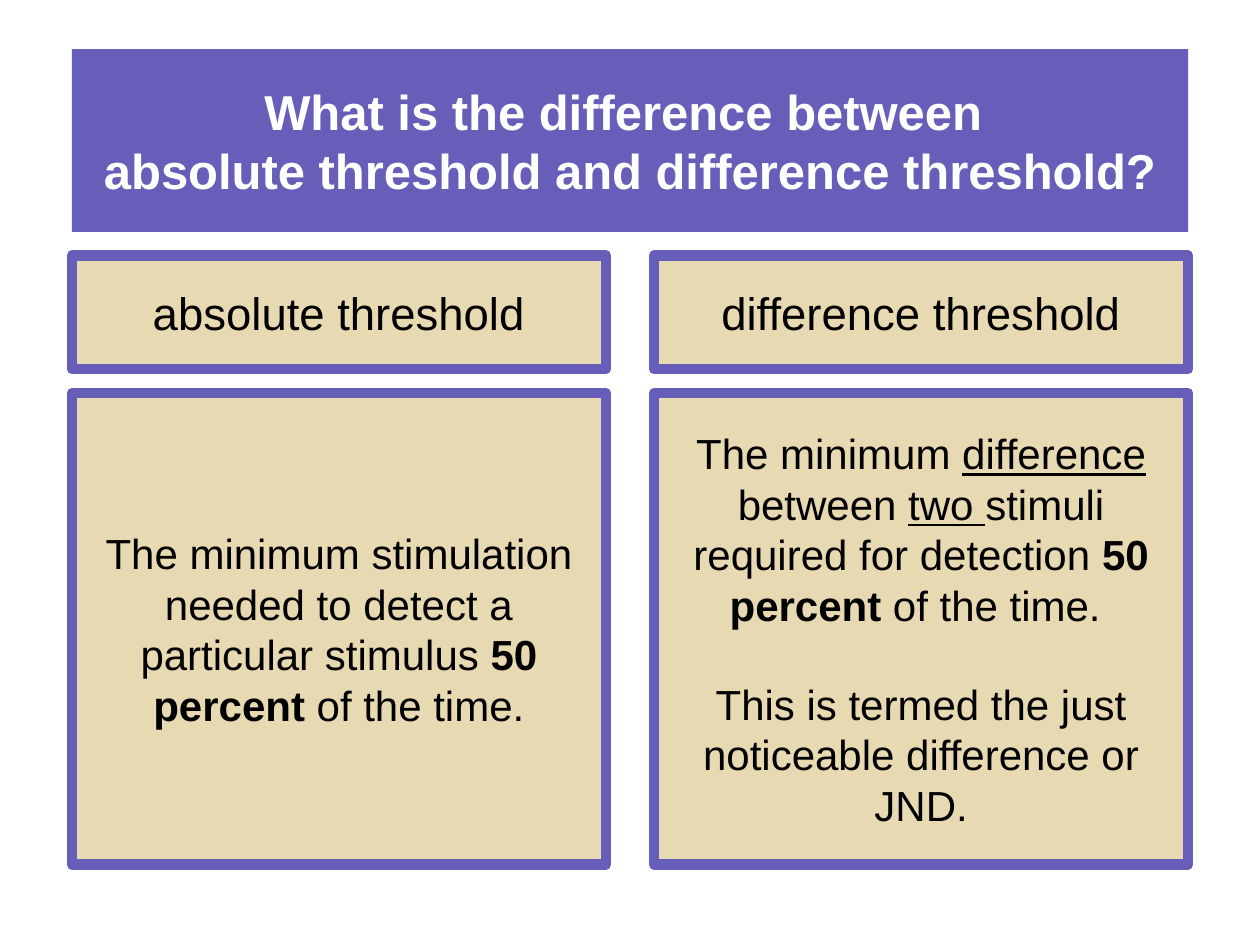
from collections import namedtuple
from dataclasses import dataclass

import pptx
import pptx.dml.color
import pptx.enum.shapes
import pptx.enum.text
import pptx.util

Box = namedtuple("Box", "left top width height")
Run = namedtuple("Run", "text bold underline", defaults=(False, False))


@dataclass(frozen=True)
class Theme:
    font: str = "Arial"
    purple: str = "665EB8"
    sand: str = "E7D9B1"
    white: str = "FFFFFF"
    black: str = "000000"
    title_size: int = 28
    heading_size: int = 26
    body_size: int = 24
    border: int = 6
    paragraph_gap: int = 28


THEME = Theme()
SLIDE_WIDTH, SLIDE_HEIGHT = 10, 7.5
MARGIN = 0.57
COLUMN_GAP = 0.38
CONTENT_WIDTH = SLIDE_WIDTH - 2 * MARGIN
TITLE_TOP, TITLE_HEIGHT = 0.39, 1.45
COLUMNS_TOP, COLUMNS_HEIGHT = 2.03, 4.83
HEADING_HEIGHT, ROW_GAP = 0.9, 0.19

TITLE = "What is the difference between \vabsolute threshold and difference threshold?"

# Each column: heading, paragraphs of runs, space between the paragraphs
COLUMNS = [
    (
        "absolute threshold",
        [
            [Run("The minimum stimulation")],
            [
                Run("needed to detect a particular stimulus "),
                Run("50 percent", bold=True),
                Run(" of the time."),
            ],
        ],
        0,
    ),
    (
        "difference threshold",
        [
            [
                Run("The minimum "),
                Run("difference", underline=True),
                Run(" between "),
                Run("two ", underline=True),
                Run("stimuli required for detection "),
                Run("50 percent", bold=True),
                Run(" of the time. "),
            ],
            [Run("This is termed the just noticeable difference or JND.")],
        ],
        THEME.paragraph_gap,
    ),
]


def rgb(value):
    return pptx.dml.color.RGBColor.from_string(value)


def add_panel(slide, box, fill, border=None):
    shape = slide.shapes.add_shape(
        pptx.enum.shapes.MSO_SHAPE.RECTANGLE, *(pptx.util.Inches(n) for n in box)
    )
    shape.shadow.inherit = False
    shape.fill.solid()
    shape.fill.fore_color.rgb = rgb(fill)
    if border:
        shape.line.color.rgb = rgb(border)
        shape.line.width = pptx.util.Pt(THEME.border)
    else:
        shape.line.fill.background()
    return shape


def write_text(shape, paragraphs, size, color, gap=0):
    """Fill the shape with centred paragraphs, gap points apart."""
    frame = shape.text_frame
    frame.word_wrap = True
    frame.vertical_anchor = pptx.enum.text.MSO_ANCHOR.MIDDLE
    for index, runs in enumerate(paragraphs):
        paragraph = frame.add_paragraph() if index else frame.paragraphs[0]
        paragraph.alignment = pptx.enum.text.PP_ALIGN.CENTER
        paragraph.space_before = pptx.util.Pt(gap if index else 0)
        for part in runs:
            for line_number, line in enumerate(part.text.split("\v")):
                if line_number:
                    paragraph.add_line_break()
                run = paragraph.add_run()
                run.text = line
                run.font.name = THEME.font
                run.font.size = pptx.util.Pt(size)
                run.font.color.rgb = rgb(color)
                run.font.bold = part.bold
                run.font.underline = part.underline


def add_title(slide, box):
    banner = add_panel(slide, box, THEME.purple)
    write_text(banner, [[Run(TITLE, bold=True)]], THEME.title_size, THEME.white)


def add_column(slide, box, heading, paragraphs, gap):
    """Stack a heading panel over a definition panel inside the box."""
    offset = HEADING_HEIGHT + ROW_GAP
    heading_box = box._replace(height=HEADING_HEIGHT)
    body_box = box._replace(top=box.top + offset, height=box.height - offset)
    heading_panel = add_panel(slide, heading_box, THEME.sand, THEME.purple)
    write_text(heading_panel, [[Run(heading)]], THEME.heading_size, THEME.black)
    body_panel = add_panel(slide, body_box, THEME.sand, THEME.purple)
    write_text(body_panel, paragraphs, THEME.body_size, THEME.black, gap)


def main():
    presentation = pptx.Presentation()
    presentation.slide_width = pptx.util.Inches(SLIDE_WIDTH)
    presentation.slide_height = pptx.util.Inches(SLIDE_HEIGHT)
    slide = presentation.slides.add_slide(presentation.slide_layouts[6])

    add_title(slide, Box(MARGIN, TITLE_TOP, CONTENT_WIDTH, TITLE_HEIGHT))
    column_width = (CONTENT_WIDTH - COLUMN_GAP) / len(COLUMNS)
    for index, column in enumerate(COLUMNS):
        left = MARGIN + index * (column_width + COLUMN_GAP)
        add_column(slide, Box(left, COLUMNS_TOP, column_width, COLUMNS_HEIGHT), *column)

    presentation.save("out.pptx")


if __name__ == "__main__":
    main()
